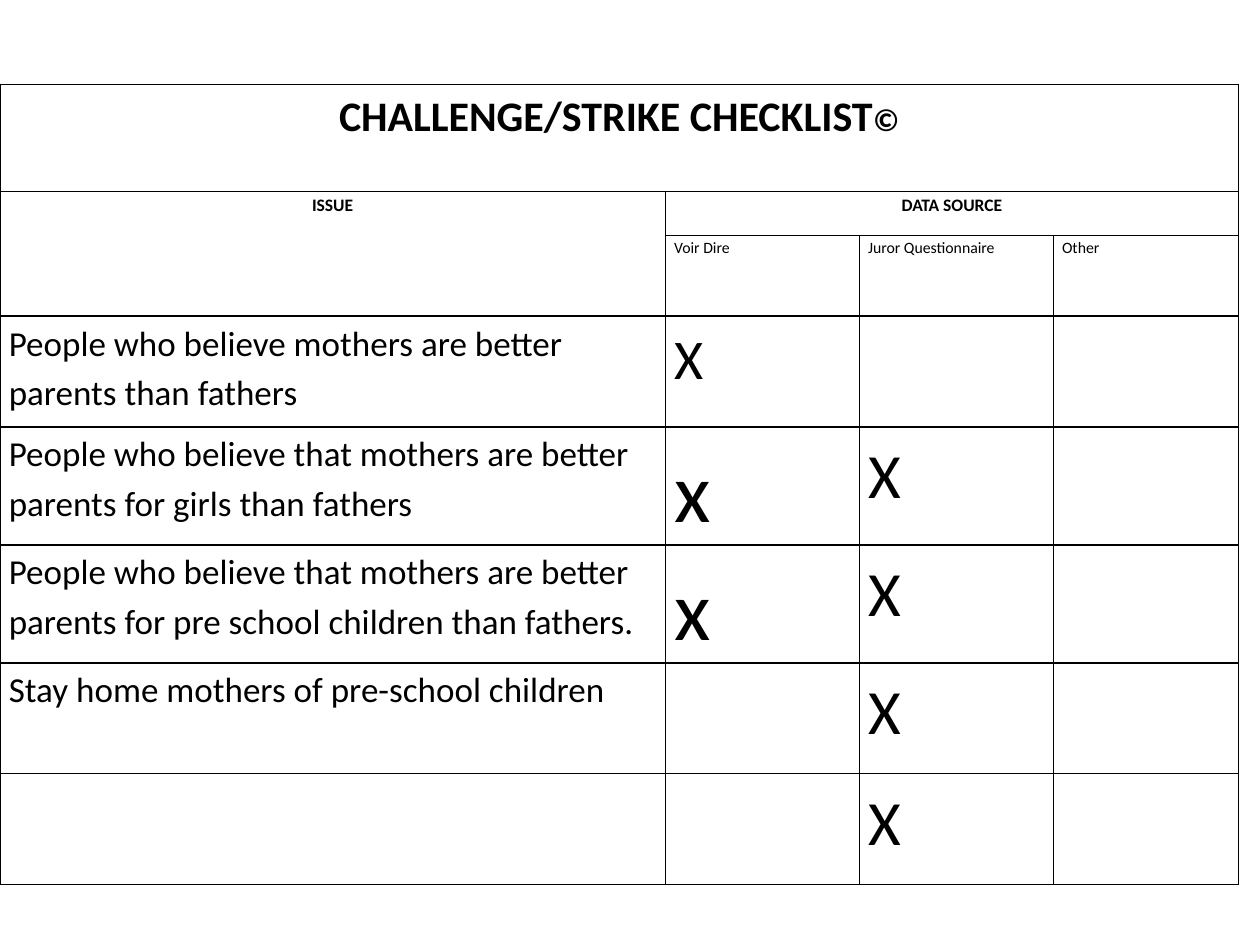
from itertools import product

from lxml.etree import SubElement
from pptx import Presentation
from pptx.dml.color import RGBColor
from pptx.enum.text import PP_ALIGN
from pptx.oxml.ns import qn
from pptx.util import Inches, Pt

BLACK = RGBColor(0, 0, 0)
WHITE = RGBColor(255, 255, 255)
FONT = "Calibri"

COLUMN_WIDTHS = [5.28, 1.54, 1.54, 1.47]
ROW_HEIGHTS = [0.85, 0.35, 0.64] + [0.88] * 5
FIRST_ISSUE_ROW = 3
MERGES = [(0, 0, 0, 3), (1, 0, 2, 0), (1, 1, 1, 3)]
SOURCES = ["Voir Dire", "Juror Questionnaire", "Other"]
ISSUES = [
    "People who believe mothers are better parents than fathers",
    "People who believe that mothers are better parents for girls than fathers",
    "People who believe that mothers are better parents for pre school children than fathers.",
    "Stay home mothers of pre-school children",
]
MARKS = [
    (0, 1, "X", 32),
    (1, 1, "x", 48),
    (1, 2, "X", 36),
    (2, 1, "x", 48),
    (2, 2, "X", 36),
    (3, 2, "X", 36),
    (4, 2, "X", 36),
]


def write(cell, text, size, bold=False, align=PP_ALIGN.LEFT):
    paragraph = cell.text_frame.paragraphs[0]
    paragraph.alignment = align
    paragraph.line_spacing = 1.15
    paragraph.space_after = Pt(10)
    run = paragraph.add_run()
    run.text = text
    run.font.name = FONT
    run.font.size = Pt(size)
    run.font.bold = bold
    run.font.color.rgb = BLACK


class ChecklistSlide:
    def __init__(self, presentation):
        self.slide = presentation.slides.add_slide(presentation.slide_layouts[6])
        self.border_width = Pt(1)
        self.side_margin = Inches(0.07)

    def style_cell(self, cell):
        cell.margin_left = cell.margin_right = self.side_margin
        cell.margin_top = cell.margin_bottom = 0
        properties = cell._tc.get_or_add_tcPr()
        for side in ("a:lnL", "a:lnR", "a:lnT", "a:lnB"):
            line = SubElement(properties, qn(side), w=str(self.border_width))
            fill = SubElement(line, qn("a:solidFill"))
            SubElement(fill, qn("a:srgbClr"), val=str(BLACK))
        cell.fill.solid()
        cell.fill.fore_color.rgb = WHITE

    def add_table(self, left, top):
        frame = self.slide.shapes.add_table(
            len(ROW_HEIGHTS), len(COLUMN_WIDTHS), Inches(left), Inches(top),
            Inches(sum(COLUMN_WIDTHS)), Inches(sum(ROW_HEIGHTS)),
        )
        table = frame.table
        table.first_row = table.horz_banding = False
        for column, width in zip(table.columns, COLUMN_WIDTHS):
            column.width = Inches(width)
        for row, height in zip(table.rows, ROW_HEIGHTS):
            row.height = Inches(height)
        for row, column in product(range(len(ROW_HEIGHTS)), range(len(COLUMN_WIDTHS))):
            self.style_cell(table.cell(row, column))
        for top_row, left_column, bottom_row, right_column in MERGES:
            table.cell(top_row, left_column).merge(table.cell(bottom_row, right_column))
        return table


def main():
    presentation = Presentation()
    presentation.slide_width = Inches(10)
    presentation.slide_height = Inches(7.5)
    table = ChecklistSlide(presentation).add_table(0, 0.67)

    heading = {"bold": True, "align": PP_ALIGN.CENTER}
    write(table.cell(0, 0), "CHALLENGE/STRIKE CHECKLIST", 24, **heading)
    write(table.cell(0, 0), "©", 18, **heading)
    write(table.cell(1, 0), "ISSUE", 10, **heading)
    write(table.cell(1, 1), "DATA SOURCE", 10, **heading)
    for column, source in enumerate(SOURCES, start=1):
        write(table.cell(2, column), source, 9)
    for row, issue in enumerate(ISSUES, start=FIRST_ISSUE_ROW):
        write(table.cell(row, 0), issue, 20)
    for issue_index, column, mark, size in MARKS:
        write(table.cell(FIRST_ISSUE_ROW + issue_index, column), mark, size)

    presentation.save("out.pptx")


if __name__ == "__main__":
    main()
